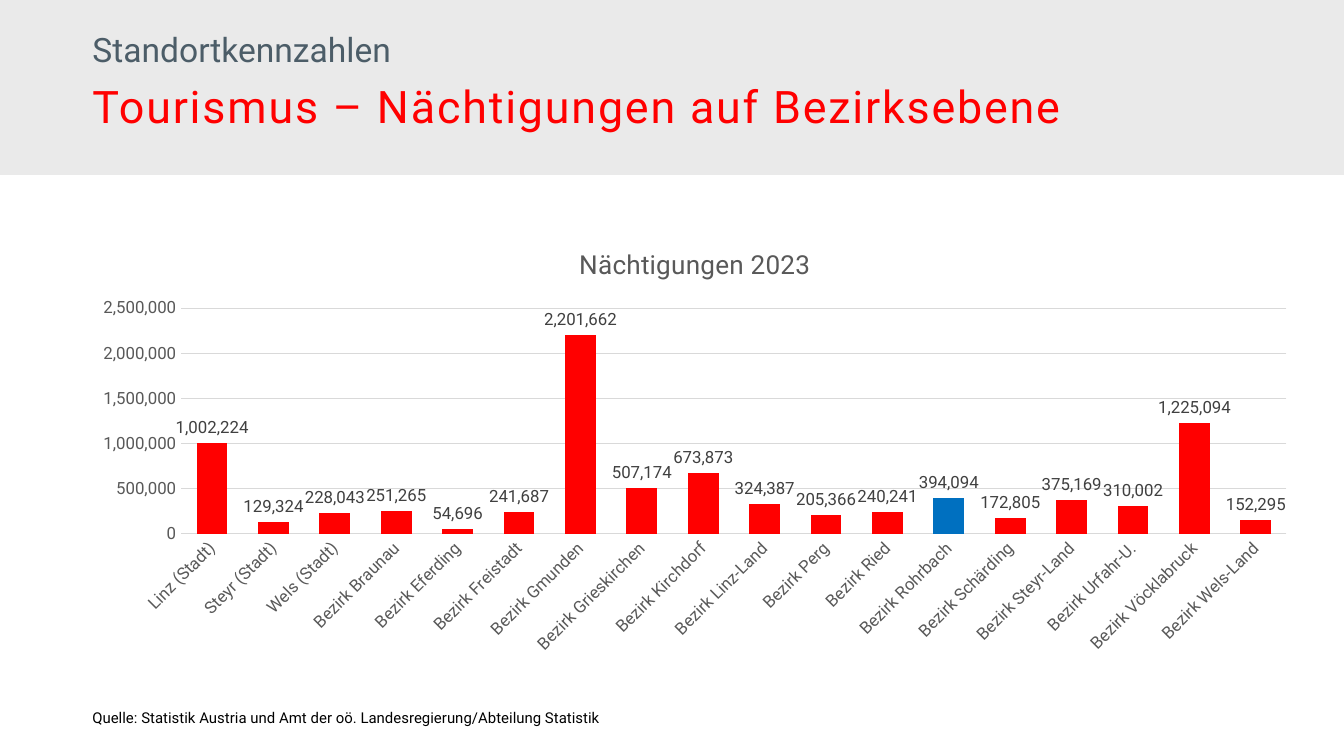
import pptx
import pptx.chart.data
import pptx.dml.color
import pptx.enum.chart
import pptx.enum.shapes
import pptx.enum.text
import pptx.util

WIDE = pptx.util.Inches(10)
HIGH = WIDE * 9 // 16
COL = WIDE / 100
ROW = HIGH / 100
FONT = "Roboto"
RED = "FF0000"
GREY = "595959"
RULE = "D9D9D9"
TITLE = "Nächtigungen 2023"
MARK = "Bezirk Rohrbach"
DATA = {
    "Linz (Stadt)": 1002224,
    "Steyr (Stadt)": 129324,
    "Wels (Stadt)": 228043,
    "Bezirk Braunau": 251265,
    "Bezirk Eferding": 54696,
    "Bezirk Freistadt": 241687,
    "Bezirk Gmunden": 2201662,
    "Bezirk Grieskirchen": 507174,
    "Bezirk Kirchdorf": 673873,
    "Bezirk Linz-Land": 324387,
    "Bezirk Perg": 205366,
    "Bezirk Ried": 240241,
    MARK: 394094,
    "Bezirk Schärding": 172805,
    "Bezirk Steyr-Land": 375169,
    "Bezirk Urfahr-U.": 310002,
    "Bezirk Vöcklabruck": 1225094,
    "Bezirk Wels-Land": 152295,
}


def tint(code):
    return pptx.dml.color.RGBColor.from_string(code)


def place(box):
    x, y, w, h = box
    return [round(n) for n in (x * COL, y * ROW, w * COL, h * ROW)]


def paint(fill, code):
    fill.solid()
    fill.fore_color.rgb = tint(code)


def style(font, size, code):
    font.name = FONT
    font.size = pptx.util.Pt(size)
    font.bold = False
    font.color.rgb = tint(code)


def rule(line):
    line.color.rgb = tint(RULE)
    line.width = pptx.util.Pt(0.75)


def write(slide, box, text, size, code, mid=True):
    frame = slide.shapes.add_textbox(*place(box)).text_frame
    frame.word_wrap = True
    if mid:
        frame.vertical_anchor = pptx.enum.text.MSO_ANCHOR.MIDDLE
    part = frame.paragraphs[0]
    run = part.add_run()
    run.text = text
    style(run.font, size, code)
    return part


def header(slide, box):
    x, y, w, h = box
    band = slide.shapes.add_shape(pptx.enum.shapes.MSO_SHAPE.RECTANGLE, *place(box))
    band.shadow.inherit = False
    paint(band.fill, "EAEAEA")
    band.line.fill.background()
    left = x + 0.059 * w
    top = (left, y + 0.17 * h, 0.46 * w, 0.25 * h)
    part = write(slide, top, "Standortkennzahlen", 18, "4C5D68")
    part.line_spacing = pptx.util.Pt(19)
    main = (left, y + 0.3 * h, 0.86 * w, 0.61 * h)
    part = write(slide, main, "Tourismus – Nächtigungen auf Bezirksebene", 24, RED)
    part.runs[0].font._element.set("spc", "100")


def scale(axis):
    axis.major_tick_mark = pptx.enum.chart.XL_TICK_MARK.NONE
    axis.minor_tick_mark = pptx.enum.chart.XL_TICK_MARK.NONE
    style(axis.tick_labels.font, 9, GREY)


def graph(slide, box):
    data = pptx.chart.data.CategoryChartData(number_format="#,##0")
    data.categories = list(DATA)
    data.add_series(TITLE, list(DATA.values()))
    kind = pptx.enum.chart.XL_CHART_TYPE.COLUMN_CLUSTERED
    chart = slide.shapes.add_chart(kind, *place(box), data).chart
    style(chart.font, 10, "000000")
    chart.has_legend = False
    chart.has_title = True
    run = chart.chart_title.text_frame.paragraphs[0].add_run()
    run.text = TITLE
    style(run.font, 14, GREY)

    names = chart.category_axis
    scale(names)
    rule(names.format.line)
    names._element.find(".//{*}bodyPr").set("rot", "-2700000")
    worth = chart.value_axis
    scale(worth)
    worth.minimum_scale = 0
    worth.maximum_scale = 2500000
    worth.major_unit = 500000
    worth.tick_labels.number_format = "#,##0"
    worth.tick_labels.number_format_is_linked = False
    worth.format.line.fill.background()
    rule(worth.major_gridlines.format.line)

    plot = chart.plots[0]
    plot.gap_width = 100
    plot.overlap = -100
    plot.vary_by_categories = False
    bars = plot.series[0]
    bars.invert_if_negative = False
    paint(bars.format.fill, RED)
    paint(bars.points[list(DATA).index(MARK)].format.fill, "0070C0")
    tags = bars.data_labels
    tags.show_value = True
    tags.position = pptx.enum.chart.XL_LABEL_POSITION.OUTSIDE_END
    tags.number_format = "#,##0"
    tags.number_format_is_linked = False
    style(tags.font, 9, "404040")


def footer(slide, box):
    text = "Quelle: Statistik Austria und Amt der oö. Landesregierung/Abteilung Statistik"
    write(slide, box, text, 8, "000000", mid=False)


def main():
    deck = pptx.Presentation()
    deck.slide_width = WIDE
    deck.slide_height = HIGH
    slide = deck.slides.add_slide(deck.slide_layouts[6])
    header(slide, (0, 0, 100, 23.13))
    graph(slide, (5.86, 29.89, 91.7, 57.8))
    footer(slide, (5.88, 92.9, 45.8, 4.27))
    deck.save("out.pptx")


if __name__ == "__main__":
    main()
